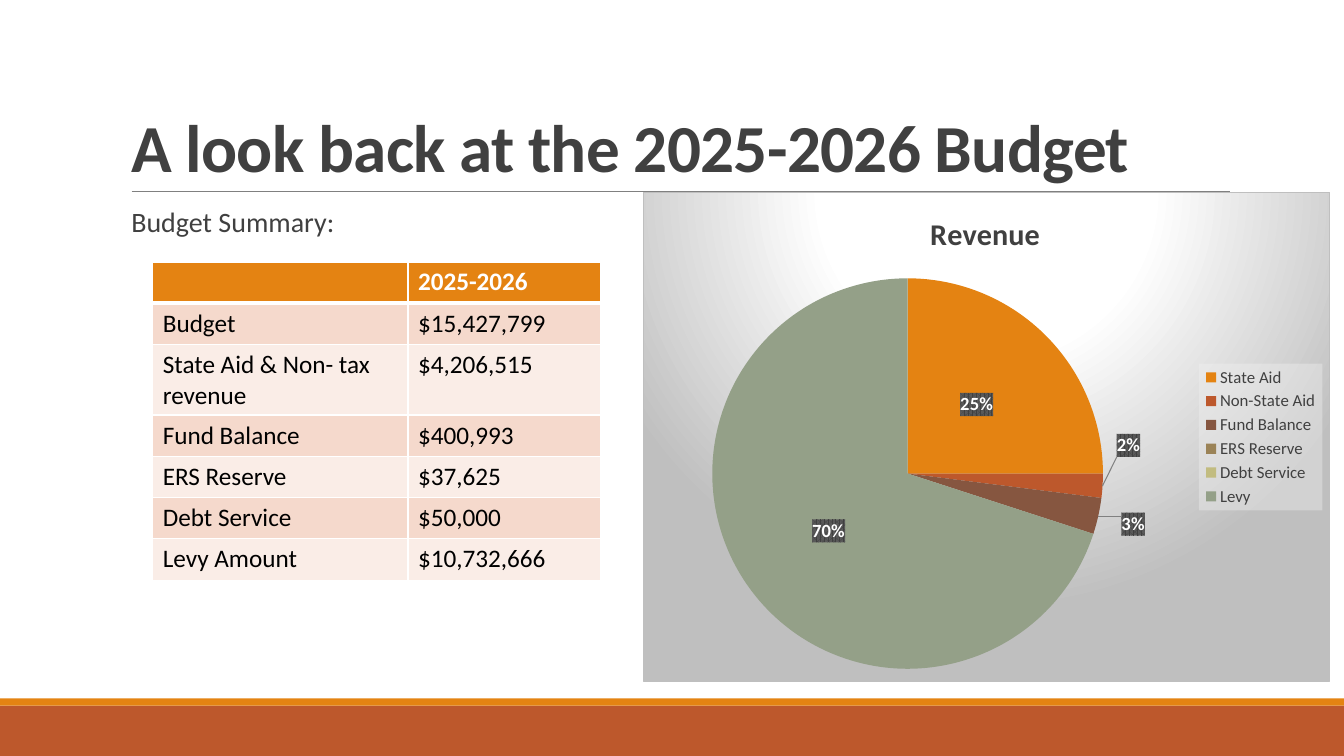
from copy import deepcopy

from lxml import etree
from pptx import Presentation
from pptx.chart.data import CategoryChartData
from pptx.dml.color import RGBColor
from pptx.enum.chart import XL_CHART_TYPE, XL_LABEL_POSITION, XL_LEGEND_POSITION
from pptx.enum.shapes import MSO_CONNECTOR, MSO_SHAPE
from pptx.enum.text import MSO_ANCHOR
from pptx.oxml import parse_xml
from pptx.oxml.ns import qn
from pptx.util import Cm, Pt

PIE = XL_CHART_TYPE.PIE
CENTER = XL_LABEL_POSITION.CENTER
RIGHT = XL_LEGEND_POSITION.RIGHT
RECTANGLE = MSO_SHAPE.RECTANGLE
STRAIGHT = MSO_CONNECTOR.STRAIGHT
TOP, BOTTOM = MSO_ANCHOR.TOP, MSO_ANCHOR.BOTTOM

TITLE = "A look back at the 2025-2026 Budget"
SUBTITLE = "Budget Summary:"
BUDGET_ROWS = [
    ("", "2025-2026"),
    ("Budget", "$15,427,799"),
    ("State Aid & Non- tax revenue", "$4,206,515"),
    ("Fund Balance", "$400,993"),
    ("ERS Reserve", "$37,625"),
    ("Debt Service", "$50,000"),
    ("Levy Amount", "$10,732,666"),
]
CHART_TITLE = "Revenue"
# category, share in percent, slice colour, label shift as a fraction of the chart
REVENUE = [
    ("State Aid", 25, "E48312", None),
    ("Non-State Aid", 2, "BD582C", (0.18, -0.07)),
    ("Fund Balance", 3, "865640", (0.19, 0.06)),
    ("ERS Reserve", 0, "9B8357", (0.21, 0.14)),
    ("Debt Service", 0, "C2BC80", (0.15, 0.17)),
    ("Levy", 70, "94A088", None),
]

THEME = {
    "font": "Calibri",
    "orange": "E48312", "rust": "BD582C", "rule": "808080",
    "bands": ("FAEDE7", "F5D9CC"),
    "title": {"size": Pt(48), "bold": True, "color": "404040"},
    "subtitle": {"size": Pt(20), "color": "404040"},
    "table_head": {"size": Pt(18), "bold": True, "color": "FFFFFF"},
    "table_body": {"size": Pt(18), "bold": False, "color": "000000"},
    "chart": {"size": Pt(10), "color": "000000"},
    "chart_title": {"size": Pt(21.6), "bold": True, "color": "404040"},
    "legend": {"size": Pt(12), "color": "404040"},
    "label": {"size": Pt(13.3), "bold": True, "color": "FFFFFF"},
}

NAMESPACES = ('xmlns:c="http://schemas.openxmlformats.org/drawingml/2006/chart" '
              'xmlns:a="http://schemas.openxmlformats.org/drawingml/2006/main"')
CHART_BACKGROUND = """<a:gradFill><a:gsLst>
<a:gs pos="0"><a:srgbClr val="FFFFFF"/></a:gs>
<a:gs pos="39000"><a:srgbClr val="FFFFFF"/></a:gs>
<a:gs pos="100000"><a:srgbClr val="BFBFBF"/></a:gs></a:gsLst>
<a:path path="circle"><a:fillToRect l="50000" t="-80000" r="50000" b="180000"/></a:path>
</a:gradFill><a:ln w="9525"><a:solidFill><a:srgbClr val="BFBFBF"/></a:solidFill></a:ln>"""
LEGEND_BACKGROUND = """<a:solidFill><a:srgbClr val="F2F2F2"><a:alpha val="39000"/>
</a:srgbClr></a:solidFill>"""
LABEL_BACKGROUND = """<a:pattFill prst="pct75"><a:fgClr><a:srgbClr val="404040"/></a:fgClr>
<a:bgClr><a:srgbClr val="595959"/></a:bgClr></a:pattFill>"""
LEADER_LINE = """<a:ln w="9525"><a:solidFill><a:srgbClr val="808080"/></a:solidFill></a:ln>"""
CELL_BORDER = """<a:{side} {namespaces} w="{width}"><a:solidFill>
<a:srgbClr val="FFFFFF"/></a:solidFill></a:{side}>"""


def style_font(font, style):
    font.name = THEME["font"]
    for name, value in style.items():
        if name == "color":
            font.color.rgb = RGBColor.from_string(value)
        else:
            setattr(font, name, value)


def set_fill(fill, color):
    fill.solid()
    fill.fore_color.rgb = RGBColor.from_string(color)


def chart_element(tag, content):
    return parse_xml(f"<c:{tag} {NAMESPACES}>{content}</c:{tag}>")


def set_layout(parent, index, **fractions):
    """Place a chart part by hand; fractions are of the whole chart."""
    for old_layout in parent.findall(qn("c:layout")):
        parent.remove(old_layout)
    modes = "" if parent.tag == qn("c:dLbl") else (
        '<c:xMode val="edge"/><c:yMode val="edge"/>')
    target = '<c:layoutTarget val="inner"/>' if parent.tag == qn("c:plotArea") else ""
    sizes = "".join(f'<c:{name} val="{value}"/>' for name, value in fractions.items())
    parent.insert(index, chart_element(
        "layout", f"<c:manualLayout>{target}{modes}{sizes}</c:manualLayout>"))


def add_text(slide, text, box, style, anchor, line_spacing, side_margin):
    shape = slide.shapes.add_textbox(*map(Cm, box))
    frame = shape.text_frame
    frame.word_wrap = True
    frame.vertical_anchor = anchor
    frame.margin_left = frame.margin_right = Cm(side_margin)
    paragraph = frame.paragraphs[0]
    paragraph.line_spacing = line_spacing
    run = paragraph.add_run()
    run.text = text
    style_font(run.font, style)
    return run


def add_band(slide, top, height, color):
    shape = slide.shapes.add_shape(RECTANGLE, 0, Cm(top), Cm(33.87), Cm(height))
    shape.shadow.inherit = False
    set_fill(shape.fill, color)
    shape.line.fill.background()


def add_rule(slide):
    line = slide.shapes.add_connector(STRAIGHT, Cm(3.32), Cm(4.83), Cm(31), Cm(4.83))
    line.line.color.rgb = RGBColor.from_string(THEME["rule"])
    line.line.width = Pt(0.5)
    etree.SubElement(line._element.spPr, qn("a:effectLst"))


def set_borders(cell, top, bottom):
    widths = {"lnL": Pt(1), "lnR": Pt(1), "lnT": top, "lnB": bottom}
    for index, (side, width) in enumerate(widths.items()):
        cell._tc.get_or_add_tcPr().insert(index, parse_xml(CELL_BORDER.format(
            side=side, width=width, namespaces=NAMESPACES)))


def add_budget_table(slide):
    widths, row_height = (6.43, 4.85), 1.04
    table = slide.shapes.add_table(
        len(BUDGET_ROWS), len(widths), Cm(3.85), Cm(6.6),
        Cm(sum(widths)), Cm(row_height * len(BUDGET_ROWS))).table
    for column, width in zip(table.columns, widths):
        column.width = Cm(width)
    for row_index, values in enumerate(BUDGET_ROWS):
        table.rows[row_index].height = Cm(row_height)
        is_head = row_index == 0
        for column_index, value in enumerate(values):
            cell = table.cell(row_index, column_index)
            cell.text = value
            set_fill(cell.fill, THEME["orange"] if is_head else THEME["bands"][row_index % 2])
            set_borders(cell, Pt(3 if row_index == 1 else 1), Pt(3 if is_head else 1))
            style_font(cell.text_frame.paragraphs[0].font,
                       THEME["table_head" if is_head else "table_body"])


def add_slice_labels(series):
    labels = series.data_labels
    for name, value in {"show_percentage": True, "show_value": False, "position": CENTER,
                        "number_format": "0%", "number_format_is_linked": False}.items():
        setattr(labels, name, value)
    style_font(labels.font, THEME["label"])
    element = labels._element
    element.find(qn("c:txPr")).addprevious(chart_element("spPr", LABEL_BACKGROUND))
    shared = [child for child in element if child.tag != qn("c:showLeaderLines")]
    shifts = [(index, row[3]) for index, row in enumerate(REVENUE) if row[3]]
    for position, (index, (x, y)) in enumerate(shifts):
        label = chart_element("dLbl", f'<c:idx val="{index}"/>')
        set_layout(label, 1, x=x, y=y)
        label.extend(deepcopy(child) for child in shared)
        element.insert(position, label)
    element.append(chart_element("leaderLines", f"<c:spPr>{LEADER_LINE}</c:spPr>"))


def add_revenue_chart(slide):
    data = CategoryChartData()
    data.categories = [row[0] for row in REVENUE]
    data.add_series("Series 1", [row[1] for row in REVENUE])
    chart = slide.shapes.add_chart(
        PIE, Cm(16.21), Cm(4.83), Cm(17.3), Cm(12.36), data).chart
    style_font(chart.font, THEME["chart"])
    chart_root = chart._chartSpace.find(qn("c:chart"))
    chart_root.addnext(chart_element("spPr", CHART_BACKGROUND))
    set_layout(chart_root.find(qn("c:plotArea")), 0, x=0.1, y=0.17, w=0.57, h=0.81)

    chart.has_title = True
    title_frame = chart.chart_title.text_frame
    title_frame.text = CHART_TITLE
    style_font(title_frame.paragraphs[0].runs[0].font, THEME["chart_title"])
    set_layout(chart_root.find(qn("c:title")), 1, x=0.41, y=0.03)

    chart.has_legend = True
    legend = chart.legend
    legend.position = RIGHT
    legend.include_in_layout = False
    style_font(legend.font, THEME["legend"])
    legend_element = legend._element
    set_layout(legend_element, 1, x=0.81, y=0.35, w=0.18, h=0.3)
    legend_element.find(qn("c:txPr")).addprevious(chart_element("spPr", LEGEND_BACKGROUND))

    plot = chart.plots[0]
    plot.vary_by_categories = True
    series = plot.series[0]
    for index, row in enumerate(REVENUE):
        set_fill(series.points[index].format.fill, row[2])
    add_slice_labels(series)


def main():
    presentation = Presentation()
    presentation.slide_width, presentation.slide_height = Cm(33.87), Cm(19.05)
    slide = presentation.slides.add_slide(presentation.slide_layouts[6])
    add_band(slide, 17.78, 1.27, THEME["rust"])
    add_band(slide, 17.6, 0.18, THEME["orange"])
    add_rule(slide)
    title = add_text(slide, TITLE, (3.06, 0.79, 27.94, 4.04), THEME["title"], BOTTOM, 0.85, 0.25)
    title.font._element.set("spc", "-50")
    add_text(slide, SUBTITLE, (3.31, 5.13, 12.5, 1.3), THEME["subtitle"], TOP, 0.9, 0)
    add_budget_table(slide)
    add_revenue_chart(slide)
    presentation.save("out.pptx")


if __name__ == "__main__":
    main()
